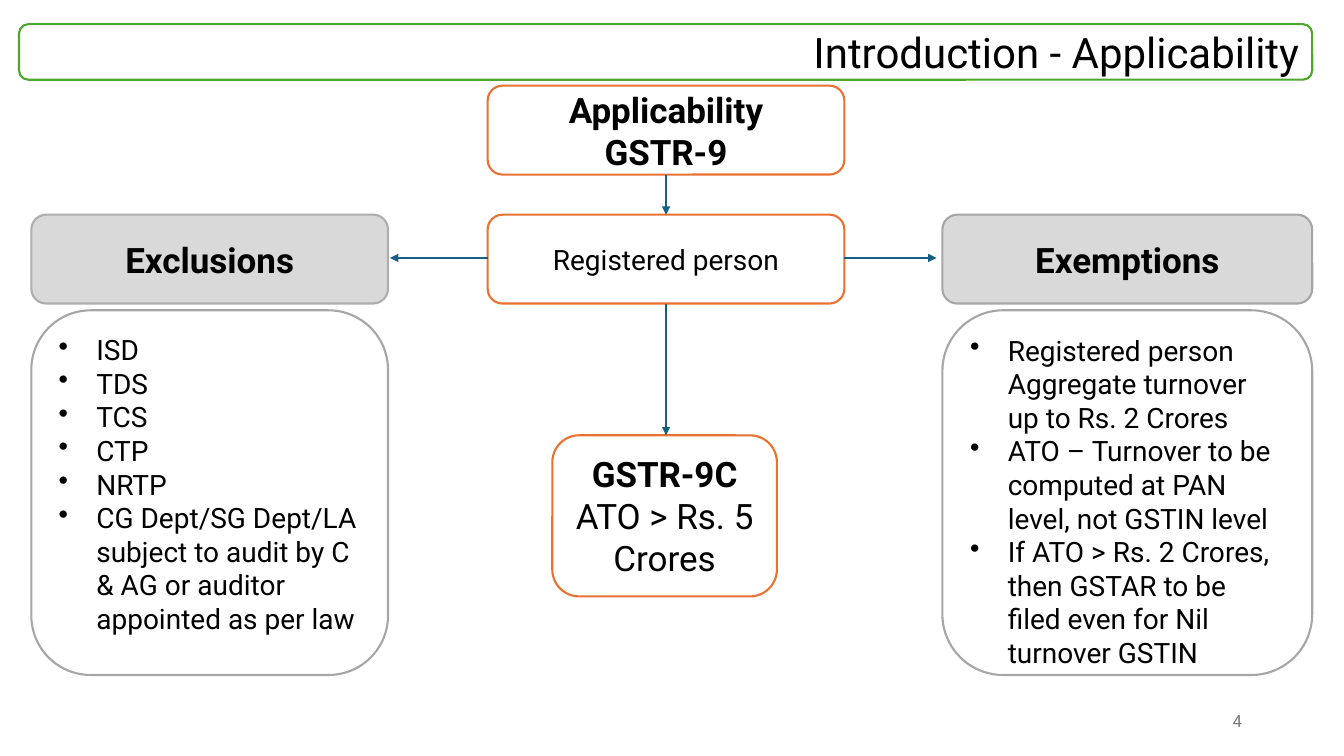
import dataclasses

import pptx
import pptx.dml.color
import pptx.enum.shapes
import pptx.enum.text
import pptx.oxml
import pptx.oxml.ns
import pptx.util

Cm = pptx.util.Cm
Align = pptx.enum.text.PP_ALIGN
Anchor = pptx.enum.text.MSO_ANCHOR


@dataclasses.dataclass(frozen=True)
class Theme:
    font: str = "Roboto"
    ink: str = "000000"
    paper: str = "FFFFFF"
    panel: str = "D9D9D9"
    green: str = "4EA72E"
    orange: str = "E97132"
    grey: str = "A6A6A6"
    light_grey: str = "AEAEAE"
    arrow: str = "156082"
    muted: str = "797979"
    title: int = 30
    heading: int = 25
    body: int = 20
    footer: int = 12
    stroke: float = 1.5


def rgb(value):
    return pptx.dml.color.RGBColor.from_string(value)


def add_element(parent, tag, **attrs):
    el = pptx.oxml.parse_xml(f"<{tag} {pptx.oxml.ns.nsdecls('a')}/>")
    for name, value in attrs.items():
        el.set(name, value)
    parent.append(el)


class SlideBuilder:
    def __init__(self, slide, theme):
        self.s = slide
        self.theme = theme

    def text(self, sp, lines, size, color, align, anchor, bold=(), bullets=False):
        tf = sp.text_frame
        tf.word_wrap = True
        tf.vertical_anchor = anchor
        for i, line in enumerate(lines):
            p = tf.paragraphs[0] if i == 0 else tf.add_paragraph()
            p.text = line
            p.alignment = align
            if bullets:
                pPr = p._p.get_or_add_pPr()
                pPr.set("marL", str(Cm(0.95)))
                pPr.set("indent", str(-Cm(0.95)))
                add_element(pPr, "a:buChar", char="•")
            p.font.name = self.theme.font
            p.font.size = pptx.util.Pt(size)
            p.font.bold = line in bold
            p.font.color.rgb = rgb(color)

    def box(self, at, lines, line, size, fill=None, align=Align.CENTER,
            anchor=Anchor.MIDDLE, bold=(), bullets=False):
        sp = self.s.shapes.add_shape(
            pptx.enum.shapes.MSO_SHAPE.ROUNDED_RECTANGLE, *map(Cm, at))
        sp.shadow.inherit = False
        sp.fill.solid()
        sp.fill.fore_color.rgb = rgb(fill or self.theme.paper)
        sp.line.color.rgb = rgb(line)
        sp.line.width = pptx.util.Pt(self.theme.stroke)
        self.text(sp, lines, size, self.theme.ink, align, anchor, bold, bullets)

    def heading(self, at, lines, line, fill=None, bold=None):
        self.box(at, lines, line, self.theme.heading, fill,
                 bold=lines if bold is None else bold)

    def bullet_list(self, at, lines):
        self.box(at, lines, self.theme.grey, self.theme.body, align=Align.LEFT,
                 anchor=Anchor.TOP, bullets=True)

    def arrow(self, x1, y1, x2, y2):
        c = self.s.shapes.add_connector(
            pptx.enum.shapes.MSO_CONNECTOR.STRAIGHT, *map(Cm, (x1, y1, x2, y2)))
        c.line.color.rgb = rgb(self.theme.arrow)
        c.line.width = pptx.util.Pt(self.theme.stroke)
        add_element(c.get_or_add_ln(), "a:tailEnd", type="triangle")
        add_element(c._element.spPr, "a:effectLst")

    def page_number(self, at, number):
        sp = self.s.shapes.add_textbox(*map(Cm, at))
        self.text(sp, [number], self.theme.footer, self.theme.muted,
                  Align.RIGHT, Anchor.MIDDLE)


def main():
    prs = pptx.Presentation()
    prs.slide_width, prs.slide_height = Cm(33.87), Cm(19.05)
    theme = Theme()
    b = SlideBuilder(prs.slides.add_slide(prs.slide_layouts[6]), theme)

    left, middle, right = 0.79, 12.29, 23.75
    width, right_width, height = 8.99, 9.32, 2.24
    top, row, lists, lists_height = 2.16, 5.41, 7.82, 9.19
    form_top = 10.97
    center, arrow_y = middle + width / 2, 6.5

    b.box((0.48, 0.61, 32.59, 1.4), ["Introduction - Applicability"],
          theme.green, theme.title, align=Align.RIGHT)
    b.heading((left, row, width, height), ["Exclusions"],
              theme.light_grey, theme.panel)
    b.heading((middle, top, width, height), ["Applicability", "GSTR-9"], theme.orange)
    b.heading((right, row, right_width, height), ["Exemptions"],
              theme.grey, theme.panel)
    b.box((middle, row, width, height), ["Registered person"],
          theme.orange, theme.body)
    b.arrow(middle + width, arrow_y, 23.6, arrow_y)
    b.arrow(middle, arrow_y, 9.83, arrow_y)
    b.bullet_list((left, lists, width, lists_height), [
        "ISD", "TDS", "TCS", "CTP", "NRTP",
        "CG Dept/SG Dept/LA subject to audit by C & AG or auditor "
        "appointed as per law",
    ])
    b.bullet_list((right, lists, right_width, lists_height), [
        "Registered person Aggregate turnover up to Rs. 2 Crores",
        "ATO – Turnover to be computed at PAN level, not GSTIN level",
        "If ATO > Rs. 2 Crores, then GSTAR to be filed even for Nil turnover GSTIN",
    ])
    b.heading((13.92, form_top, 5.66, 4.06), ["GSTR-9C", "ATO > Rs. 5 Crores"],
              theme.orange, bold=["GSTR-9C"])
    b.arrow(center, top + height, center, row)
    b.arrow(center, row + height, center, form_top)
    b.page_number((23.93, 17.65, 7.62, 1.02), "4")

    prs.save("out.pptx")


if __name__ == "__main__":
    main()
